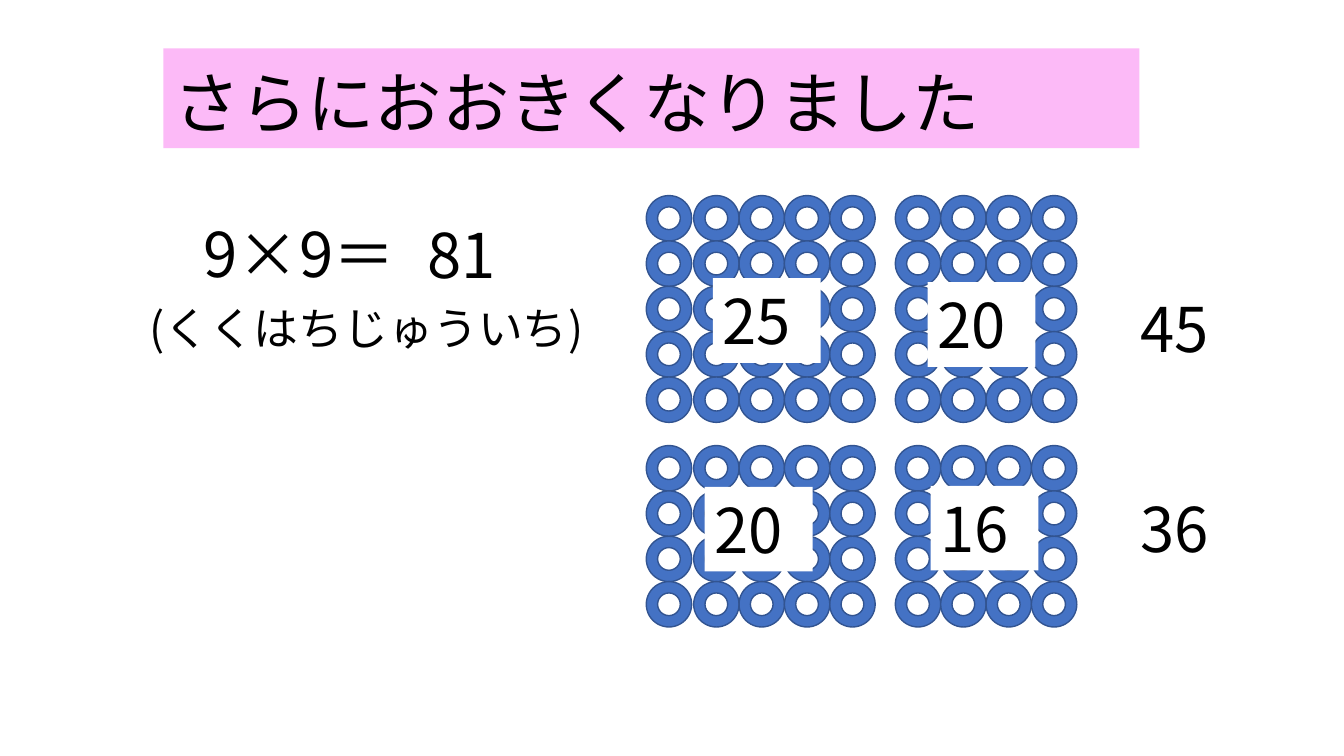
import dataclasses

import lxml.etree
import pptx
import pptx.dml.color
import pptx.enum.shapes
import pptx.enum.text
import pptx.oxml.ns
import pptx.util

Inches = pptx.util.Inches
FONT = "Noto Sans CJK JP"
RING = 0.45  # ring diameter, also the pitch of the grid
LEFT_COLUMNS = [6.41] + [6.88 + RING * i for i in range(4)]
RIGHT_COLUMNS = [8.88 + RING * i for i in range(4)]
UPPER_ROWS = [1.94 + RING * i for i in range(5)]
LOWER_ROWS = [4.42 + RING * i for i in range(4)]


@dataclasses.dataclass
class Block:
    columns: list[float]
    rows: list[float]
    covered: set[tuple[int, int]]  # (row, column) places under the number card


@dataclasses.dataclass
class Label:
    text: str
    left: float
    top: float
    width: float
    height: float = 0.84
    size: int = 44
    fill: str | None = None
    wrap: bool = True
    anchor: pptx.enum.text.MSO_ANCHOR = pptx.enum.text.MSO_ANCHOR.TOP
    line_spacing: float = 1.0


BLOCKS = [
    Block(LEFT_COLUMNS, UPPER_ROWS, {(2, 2)}),
    Block(RIGHT_COLUMNS, UPPER_ROWS, {(2, 1), (2, 2)}),
    Block(LEFT_COLUMNS, LOWER_ROWS, {(1, 2)}),
    Block(RIGHT_COLUMNS, LOWER_ROWS, {(1, 1), (1, 2)}),
]

LABELS = [
    # Title band
    Label("さらにおおきくなりました", 1.62, 0.48, 9.68, 0.99, 48, "FCBAF7",
          anchor=pptx.enum.text.MSO_ANCHOR.BOTTOM, line_spacing=0.9),
    # Multiplication and its reading
    Label("9×9＝", 1.92, 2.09, 2.31, wrap=False),
    Label("81", 4.14, 2.1, 1.07),
    Label("(くくはちじゅういち)", 1.38, 2.93, 4.82, 0.64, 32),
    # Number cards on the blocks
    Label("25", 7.07, 2.76, 1.07, fill="FFFFFF"),
    Label("20", 9.2, 2.8, 1.07, fill="FFFFFF"),
    Label("20", 6.99, 4.83, 1.07, fill="FFFFFF"),
    Label("16", 9.23, 4.82, 1.07, fill="FFFFFF"),
    # Row sums
    Label("45", 11.21, 2.84, 1.12),
    Label("36", 11.21, 4.82, 1.12),
]


def color(value: str) -> pptx.dml.color.RGBColor:
    return pptx.dml.color.RGBColor.from_string(value)


def draw_block(slide: pptx.slide.Slide, block: Block) -> None:
    rings = slide.shapes.add_group_shape()
    for r, top in enumerate(block.rows):
        for c, left in enumerate(block.columns):
            if (r, c) in block.covered:
                continue
            ring = rings.shapes.add_shape(
                pptx.enum.shapes.MSO_SHAPE.DONUT,
                Inches(left), Inches(top), Inches(RING), Inches(RING))
            ring.shadow.inherit = False
            ring.fill.solid()
            ring.fill.fore_color.rgb = color("4472C4")
            ring.line.color.rgb = color("325491")
            ring.line.width = pptx.util.Pt(1)


def draw_label(slide: pptx.slide.Slide, label: Label) -> None:
    box = slide.shapes.add_textbox(Inches(label.left), Inches(label.top),
                                   Inches(label.width), Inches(label.height))
    if label.fill:
        box.fill.solid()
        box.fill.fore_color.rgb = color(label.fill)
    frame = box.text_frame
    frame.word_wrap = label.wrap
    frame.vertical_anchor = label.anchor
    paragraph = frame.paragraphs[0]
    paragraph.line_spacing = label.line_spacing
    run = paragraph.add_run()
    run.text = label.text
    run.font.size = pptx.util.Pt(label.size)
    run.font.color.rgb = color("000000")
    run.font.name = FONT
    # East Asian typeface for the kana
    lxml.etree.SubElement(run.font._element, pptx.oxml.ns.qn("a:ea"), typeface=FONT)


def main() -> None:
    deck = pptx.Presentation()
    deck.slide_width, deck.slide_height = Inches(13.33), Inches(7.5)
    slide = deck.slides.add_slide(deck.slide_layouts[6])
    for block in BLOCKS:
        draw_block(slide, block)
    for label in LABELS:
        draw_label(slide, label)
    deck.save("out.pptx")


if __name__ == "__main__":
    main()
